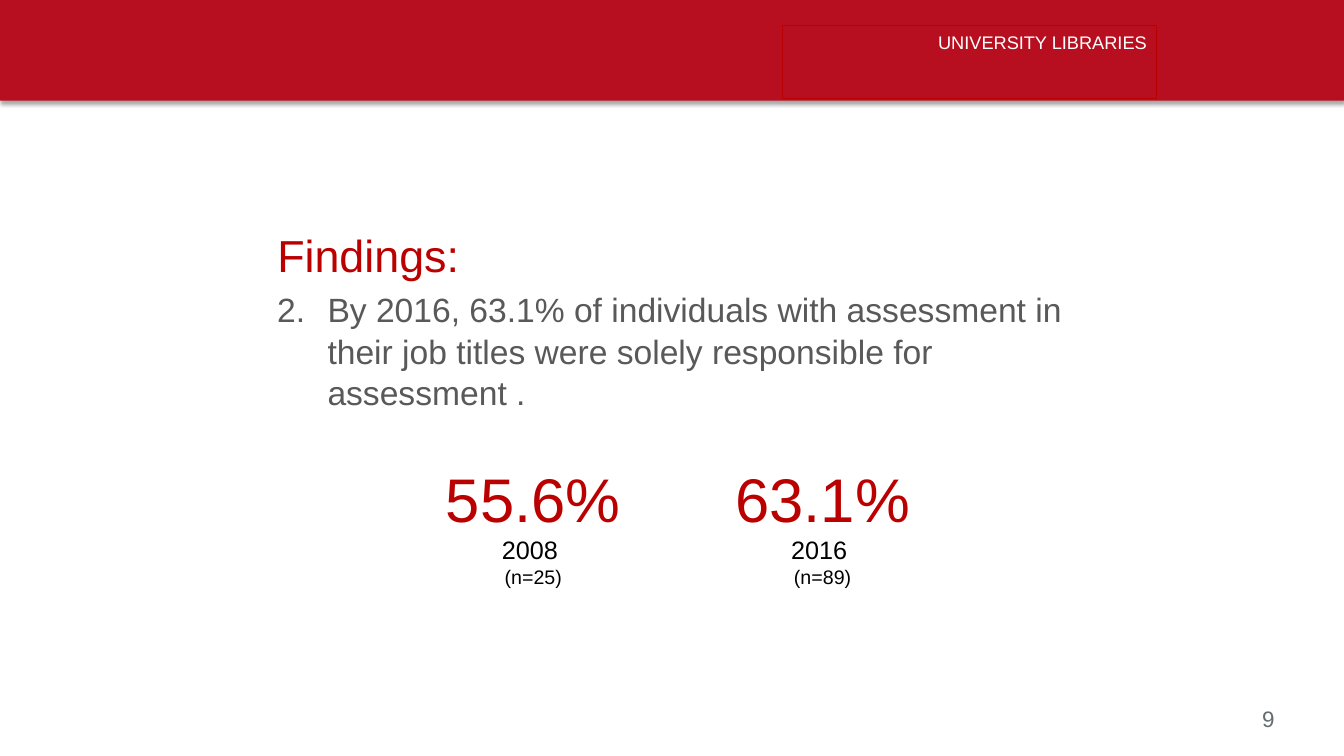
from pptx import Presentation
from pptx.dml.color import RGBColor
from pptx.enum.shapes import MSO_SHAPE as Shape
from pptx.enum.text import MSO_ANCHOR as Anchor, MSO_AUTO_SIZE as AutoSize, PP_ALIGN as Align
from pptx.oxml import parse_xml
from pptx.oxml.ns import nsdecls
from pptx.util import Inches, Pt

BANNER_RED = RGBColor(0xB7, 0x0F, 0x20)
ACCENT_RED = RGBColor(0xBB, 0x00, 0x00)
BODY_GRAY = RGBColor(0x59, 0x59, 0x59)
PAGE_GRAY = RGBColor(0x63, 0x6D, 0x6E)
BLACK = RGBColor(0, 0, 0)
WHITE = RGBColor(0xFF, 0xFF, 0xFF)
FONT = "Arial"


def place(box, left, top, width, height):
    box.left, box.top = Inches(left), Inches(top)
    box.width, box.height = Inches(width), Inches(height)


def add_box(page, left, top, width, height, wrap=True):
    box = page.shapes.add_textbox(*map(Inches, (left, top, width, height)))
    box.text_frame.word_wrap = wrap
    return box


def write(para, text, size, color, align=Align.LEFT):
    para.alignment = align
    span = para.add_run()
    span.text = text
    span.font.name, span.font.size = FONT, Pt(size)
    span.font.color.rgb = color


def number_from(para, start, indent):
    properties = para._p.get_or_add_pPr()
    properties.set("marL", str(Inches(indent)))
    properties.set("indent", str(-Inches(indent)))
    properties.append(parse_xml(f'<a:buFont {nsdecls("a")} typeface="+mj-lt"/>'))
    properties.append(parse_xml(
        f'<a:buAutoNum {nsdecls("a")} type="arabicPeriod" startAt="{start}"/>'))


def add_banner(page, left, top, width, height):
    # Red band with a soft shadow below it
    band = page.shapes.add_shape(Shape.RECTANGLE, *map(Inches, (left, top, width, height)))
    band.fill.solid()
    band.fill.fore_color.rgb = BANNER_RED
    band.line.fill.background()
    band._element.spPr.append(parse_xml(
        f'<a:effectLst {nsdecls("a")}>'
        f'<a:outerShdw blurRad="{Pt(3.1)}" dist="{Pt(1.8)}" dir="5400000" rotWithShape="0">'
        '<a:srgbClr val="000000"><a:alpha val="35000"/></a:srgbClr>'
        '</a:outerShdw></a:effectLst>'))

    # Department name
    label = add_box(page, left + 7.76, top + 0.25, 3.71, 0.73)
    label.line.color.rgb = ACCENT_RED
    label.line.width = Pt(0.75)
    para = label.text_frame.paragraphs[0]
    para.line_spacing = Pt(16.4)
    write(para, "UNIVERSITY LIBRARIES", 13, WHITE, Align.RIGHT)


def add_findings(page, left, top, width, height):
    # Heading
    title_height = 0.6
    title = page.shapes.title
    place(title, left, top, width, title_height)
    frame = title.text_frame
    frame.word_wrap = True
    frame.auto_size = AutoSize.NONE
    frame.vertical_anchor = Anchor.TOP
    write(frame.paragraphs[0], "Findings:", 32, ACCENT_RED)

    # Numbered finding
    body = add_box(page, left, top + title_height, width, height - title_height)
    para = body.text_frame.paragraphs[0]
    number_from(para, start=2, indent=0.5)
    para.line_spacing = 1.03
    write(para, "By 2016, 63.1% of individuals with assessment in their job titles "
                "were solely responsible for assessment .", 24, BODY_GRAY)


def add_statistic(page, left, top, width, height, percent, year, count):
    frame = add_box(page, left, top, width, height).text_frame
    lines = [(percent, 44, ACCENT_RED), (f"{year} ", 18, BLACK), (f"(n={count})", 14, BLACK)]
    for index, (text, size, color) in enumerate(lines):
        para = frame.add_paragraph() if index else frame.paragraphs[0]
        write(para, text, size, color, Align.CENTER)


def add_page_number(page, left, top, width, height, number):
    box = add_box(page, left, top, width, height, wrap=False)
    write(box.text_frame.paragraphs[0], number, 16, PAGE_GRAY, Align.CENTER)


def main():
    deck = Presentation()
    deck.slide_width, deck.slide_height = Inches(13.33), Inches(7.5)
    page = deck.slides.add_slide(deck.slide_layouts[5])

    add_banner(page, 0, 0, 13.33, 1)
    add_findings(page, 2.65, 2.21, 8.52, 4.6)
    statistics = [("55.6%", 2008, 25), ("63.1%", 2016, 89)]
    for column, values in enumerate(statistics):
        add_statistic(page, 4.26 + 2.87 * column, 4.52, 2.06, 1.38, *values)
    add_page_number(page, 12.34, 6.95, 0.48, 0.37, "9")

    deck.save("out.pptx")


if __name__ == "__main__":
    main()
